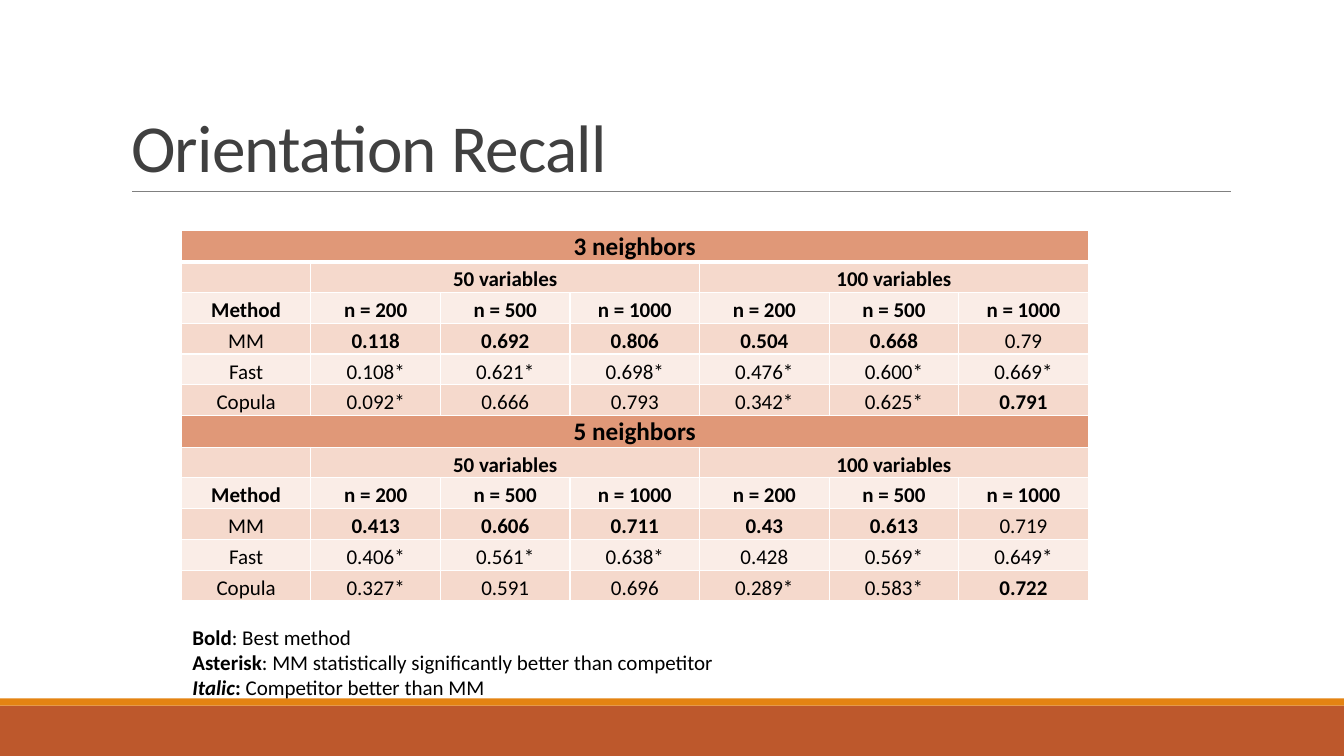
import pptx
import pptx.dml.color
import pptx.enum.shapes
import pptx.enum.text
import pptx.oxml
import pptx.oxml.ns
import pptx.util
from pptx.util import Cm

ANCHOR = pptx.enum.text.MSO_ANCHOR
ALIGN = pptx.enum.text.PP_ALIGN
BAND, DARK_ROW, LIGHT_ROW = "E09878", "F5D9CC", "FAEDE7"
SAMPLE_SIZES = ["n = 200", "n = 500", "n = 1000"]
RECALL = {
    "3 neighbors": [
        ["MM", "0.118", "0.692", "0.806", "0.504", "0.668", "0.79"],
        ["Fast", "0.108*", "0.621*", "0.698*", "0.476*", "0.600*", "0.669*"],
        ["Copula", "0.092*", "0.666", "0.793", "0.342*", "0.625*", "0.791"],
    ],
    "5 neighbors": [
        ["MM", "0.413", "0.606", "0.711", "0.43", "0.613", "0.719"],
        ["Fast", "0.406*", "0.561*", "0.638*", "0.428", "0.569*", "0.649*"],
        ["Copula", "0.327*", "0.591", "0.696", "0.289*", "0.583*", "0.722"],
    ],
}
LEGEND = [
    [("Bold", True, False), (": Best method", False, False)],
    [("Asterisk", True, False),
     (": MM statistically significantly better than competitor", False, False)],
    [("Italic", True, True), (": ", True, False),
     ("Competitor better than MM", False, False)],
]


def color(hex_string):
    """Return the colour for a hex string."""
    return pptx.dml.color.RGBColor.from_string(hex_string)


def apply(target, formats):
    """Set each attribute of the target from a dict of values."""
    for attribute, value in formats.items():
        setattr(target, attribute, value)


def add_run(paragraph, text, size, hex_string="000000", bold=False, italic=False):
    """Add a formatted run to a paragraph and return it."""
    run = paragraph.add_run()
    run.text = text
    apply(run.font, {"name": "Calibri", "size": pptx.util.Pt(size),
                     "bold": bold, "italic": italic})
    run.font.color.rgb = color(hex_string)
    return run


def add_footer(slide, left, top, width, height):
    """Draw the orange strip and the rust bar below it."""
    strip = Cm(0.18)
    for fill, bar_top, bar_height in [("BD582C", top + strip, height - strip),
                                      ("E48312", top, strip)]:
        bar = slide.shapes.add_shape(pptx.enum.shapes.MSO_SHAPE.RECTANGLE,
                                     left, bar_top, width, bar_height)
        bar.shadow.inherit = False
        bar.fill.solid()
        bar.fill.fore_color.rgb = color(fill)
        bar.line.fill.background()


def add_heading(slide, left, top, width, height):
    """Place the title and the thin rule at its foot."""
    rule = slide.shapes.add_connector(pptx.enum.shapes.MSO_CONNECTOR.STRAIGHT,
                                      left + Cm(0.28), top + height,
                                      left + width + Cm(0.02), top + height)
    rule.line.color.rgb = color("808080")
    rule.line.width = pptx.util.Pt(0.5)
    pptx.oxml.ns.qn("a:effectLst")
    rule._element.spPr.append(pptx.oxml.parse_xml(
        f'<a:effectLst {pptx.oxml.ns.nsdecls("a")}/>'))
    title = slide.shapes.title
    apply(title, {"left": left, "top": top, "width": width, "height": height})
    apply(title.text_frame, {"vertical_anchor": ANCHOR.BOTTOM, "word_wrap": True,
                             "auto_size": pptx.enum.text.MSO_AUTO_SIZE.NONE})
    heading = title.text_frame.paragraphs[0]
    apply(heading, {"alignment": ALIGN.LEFT, "line_spacing": 0.85})
    run = add_run(heading, "Orientation Recall", 48, "404040")
    run.font._element.set("spc", "-50")


def format_cell(cell, fill, bottom):
    """Give a cell its margins, white borders and fill."""
    apply(cell, {"vertical_anchor": ANCHOR.BOTTOM, "margin_left": Cm(0.02),
                 "margin_right": Cm(0.02), "margin_top": Cm(0.02), "margin_bottom": 0})
    properties = cell._tc.get_or_add_tcPr()
    for side, points in {"L": 1, "R": 1, "T": 1, "B": bottom}.items():
        properties.append(pptx.oxml.parse_xml(
            f'<a:ln{side} {pptx.oxml.ns.nsdecls("a")} w="{pptx.util.Pt(points)}">'
            f'<a:solidFill><a:srgbClr val="FFFFFF"/></a:solidFill></a:ln{side}>'))
    cell.fill.solid()
    cell.fill.fore_color.rgb = color(fill)


def recall_rows():
    """Return each table row as a fill, a text size and (text, bold) pairs."""
    rows = []
    for neighbors, methods in RECALL.items():
        headers = [
            [neighbors] + [""] * 6,
            ["", "50 variables", "", "", "100 variables", "", ""],
            ["Method"] + SAMPLE_SIZES * 2,
        ]
        for fill, size, texts in zip([BAND, DARK_ROW, LIGHT_ROW], [18, 15, 15], headers):
            rows.append((fill, size, [(text, True) for text in texts]))
        best = [max(column, key=lambda score: float(score.rstrip("*")))
                for column in list(zip(*methods))[1:]]
        for fill, (method, *scores) in zip([DARK_ROW, LIGHT_ROW, DARK_ROW], methods):
            marked = [(score, score == top) for score, top in zip(scores, best)]
            rows.append((fill, 15, [(method, False)] + marked))
    return rows


def add_recall_table(slide, left, top, width, height):
    """Build the recall table with one block per neighbor count."""
    rows = recall_rows()
    recall = slide.shapes.add_table(len(rows), 7, left, top, width, height).table
    apply(recall, {"first_row": False, "horz_banding": False})
    for r, (fill, size, entries) in enumerate(rows):
        for c, (text, bold) in enumerate(entries):
            cell = recall.cell(r, c)
            format_cell(cell, fill, 3 if r == 0 else 1)
            paragraph = cell.text_frame.paragraphs[0]
            paragraph.alignment = ALIGN.CENTER
            if text:
                add_run(paragraph, text, size, bold=bold)
            else:
                paragraph._p.get_or_add_endParaRPr().set("sz", str(size * 100))
    for block in range(0, len(rows), 6):
        for row, first, last in [(block, 0, 6), (block + 1, 1, 3), (block + 1, 4, 6)]:
            recall.cell(row, first).merge(recall.cell(row, last))


def add_legend(slide, left, top, width, height):
    """Explain the marks used in the table."""
    legend = slide.shapes.add_textbox(left, top, width, height).text_frame
    legend.word_wrap = True
    for index, parts in enumerate(LEGEND):
        line = legend.add_paragraph() if index else legend.paragraphs[0]
        for text, bold, italic in parts:
            add_run(line, text, 15, bold=bold, italic=italic)


def main():
    """Build and save the slide."""
    deck = pptx.Presentation()
    apply(deck, {"slide_width": Cm(33.87), "slide_height": Cm(19.05)})
    slide = deck.slides.add_slide(deck.slide_layouts[5])
    add_footer(slide, 0, Cm(17.6), deck.slide_width, Cm(1.45))
    add_heading(slide, Cm(3.05), Cm(0.78), Cm(27.94), Cm(4.04))
    add_recall_table(slide, Cm(4.57), Cm(5.8), Cm(22.86), Cm(9.3))
    add_legend(slide, Cm(4.6), Cm(15.6), Cm(23.2), Cm(2.19))
    deck.save("out.pptx")


if __name__ == "__main__":
    main()
